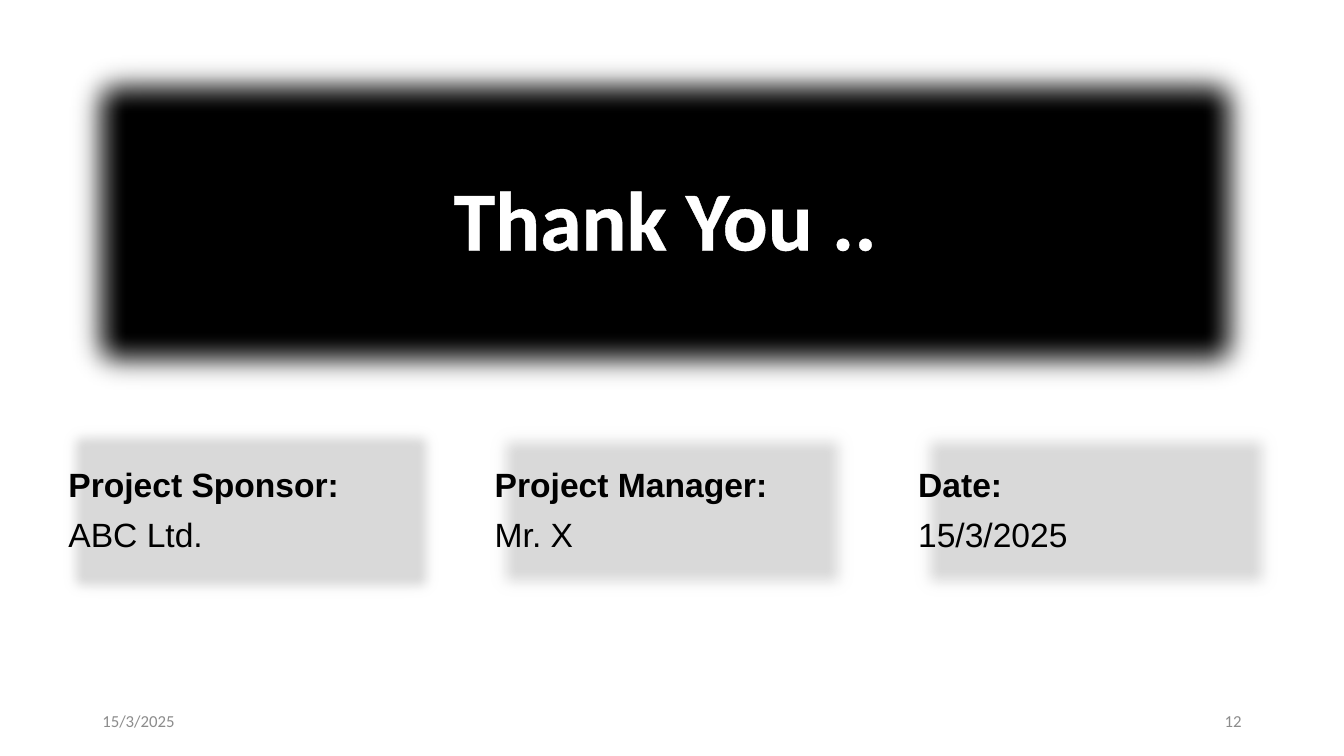
from lxml import etree
from pptx import Presentation
from pptx.dml.color import RGBColor
from pptx.enum.shapes import MSO_SHAPE
from pptx.enum.text import MSO_ANCHOR, PP_ALIGN
from pptx.oxml.ns import qn
from pptx.util import Pt

RECT = MSO_SHAPE.RECTANGLE
MIDDLE = MSO_ANCHOR.MIDDLE
LEFT, CENTER, RIGHT = PP_ALIGN.LEFT, PP_ALIGN.CENTER, PP_ALIGN.RIGHT

BLACK = RGBColor(0x00, 0x00, 0x00)
WHITE = RGBColor(0xFF, 0xFF, 0xFF)
CARD_GRAY = RGBColor(0xD9, 0xD9, 0xD9)
FOOTER_GRAY = RGBColor(0x8C, 0x8C, 0x8C)

CARD_TOP, CARD_HEIGHT = 300.25, 130.3
CARDS = [
    ("Project Sponsor:", "ABC Ltd.", 41.75, 275, 10),
    ("Project Manager:", "Mr. X", 346.3, 267.85, 12.5),
    ("Date:", "15/3/2025", 648.7, 267.85, 12.5),
]
FOOTER_TOP, FOOTER_WIDTH, FOOTER_HEIGHT = 500.4, 216, 28.8


def add_text(p, text, font="Arial", size=24, color=BLACK, bold=False,
             align=LEFT, spacing=None, before=0):
    p.alignment = align
    p.space_before = Pt(before)
    if spacing:
        p.line_spacing = spacing
    r = p.add_run()
    r.text = text
    r.font.name = font
    r.font.size = Pt(size)
    r.font.bold = bold
    r.font.color.rgb = color
    return r


def outline_text(r, color, width):
    ln = etree.Element(qn("a:ln"), w=str(Pt(width)))
    fill = etree.SubElement(ln, qn("a:solidFill"))
    etree.SubElement(fill, qn("a:srgbClr"), val=str(color))
    r.font._element.insert(0, ln)


def add_soft_panel(slide, left, top, width, height, fill, radius):
    sp = slide.shapes.add_shape(RECT, Pt(left), Pt(top), Pt(width), Pt(height))
    sp.fill.solid()
    sp.fill.fore_color.rgb = fill
    sp.line.fill.background()
    sp.shadow.inherit = False
    effects = sp._element.spPr.find(qn("a:effectLst"))
    etree.SubElement(effects, qn("a:softEdge"), rad=str(Pt(radius)))
    sp.text_frame.word_wrap = True
    sp.text_frame.vertical_anchor = MIDDLE
    return sp


def add_card(slide, label, value, left, width, radius):
    sp = add_soft_panel(slide, left, CARD_TOP, width, CARD_HEIGHT, CARD_GRAY, radius)
    tf = sp.text_frame
    add_text(tf.paragraphs[0], label, bold=True, spacing=0.9, before=10)
    add_text(tf.add_paragraph(), value, spacing=0.9, before=10)


def add_title(slide, text):
    sp = add_soft_panel(slide, 41.75, 31.7, 866.9, 255.6, BLACK, 25)
    sp.line.color.rgb = WHITE
    sp.line.width = Pt(1.5)
    r = add_text(sp.text_frame.paragraphs[0], text, font="Calibri", size=60,
                 color=WHITE, bold=True, align=CENTER, spacing=0.9)
    outline_text(r, WHITE, 0.75)


def add_footer(slide, text, left, align):
    sp = slide.shapes.add_textbox(Pt(left), Pt(FOOTER_TOP), Pt(FOOTER_WIDTH),
                                  Pt(FOOTER_HEIGHT))
    tf = sp.text_frame
    tf.word_wrap = True
    tf.vertical_anchor = MIDDLE
    add_text(tf.paragraphs[0], text, font="Calibri", size=12,
             color=FOOTER_GRAY, align=align)


def main():
    prs = Presentation()
    prs.slide_width, prs.slide_height = Pt(960), Pt(540)
    slide = prs.slides.add_slide(prs.slide_layouts[6])
    for card in CARDS:
        add_card(slide, *card)
    add_title(slide, "Thank You ..")
    add_footer(slide, "15/3/2025", 66, LEFT)
    add_footer(slide, "12", 678, RIGHT)
    prs.save("out.pptx")


if __name__ == "__main__":
    main()
